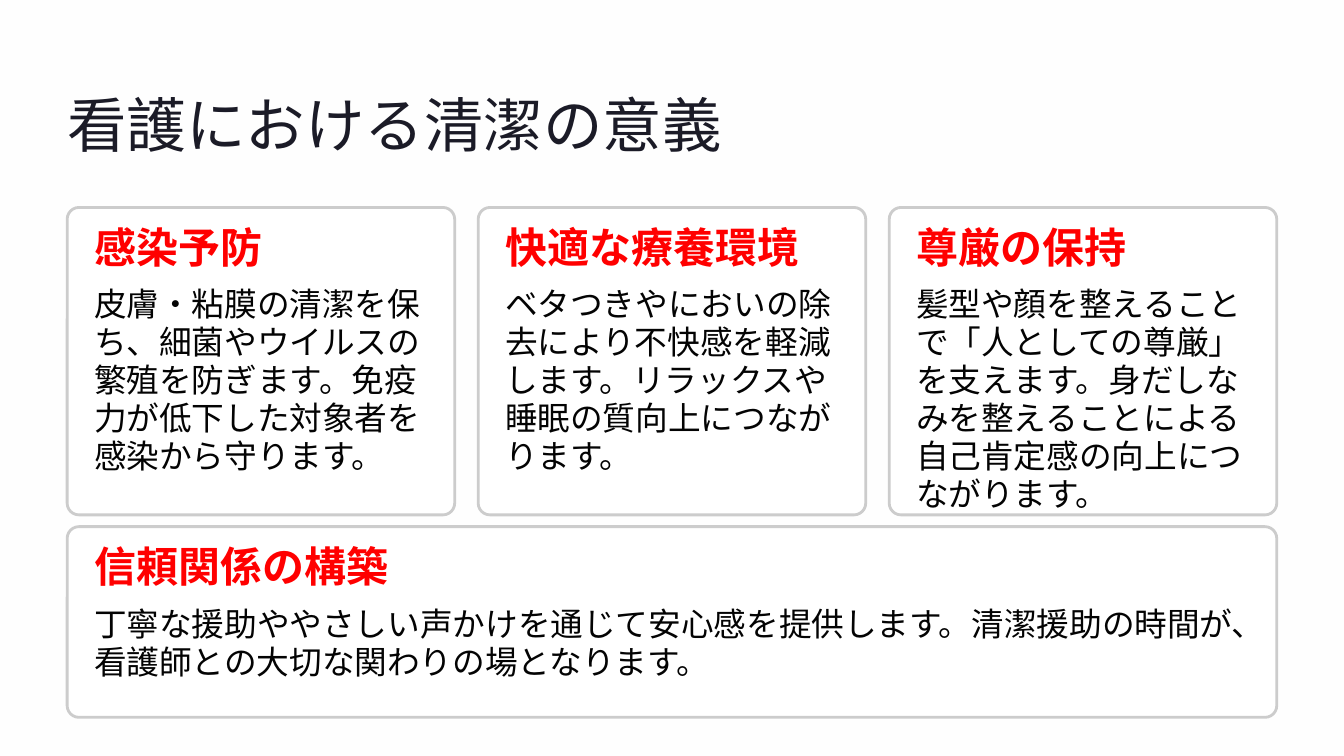
from pptx import Presentation
from pptx import util as u
from pptx.dml.color import RGBColor
from pptx.enum import shapes, text

COLORS = {"page": "FEFEFE", "card": "FFFFFF", "border": "CCCCCC",
          "title": "1B1B27", "heading": "FF0000", "body": "030303"}
MARGIN, CONTENT_W = 0.8, 14.4
COLUMN_GAP, PADDING, RADIUS = 0.28, 0.32, 0.14
CARD_TOP, CARD_H = 2.47, 3.66
WIDE_TOP, WIDE_H = 6.27, 2.27

BENEFITS = [
    ("感染予防", "皮膚・粘膜の清潔を保ち、細菌やウイルスの繁殖を防ぎます。免疫力が低下した対象者を感染から守ります。"),
    ("快適な療養環境", "ベタつきやにおいの除去により不快感を軽減します。リラックスや睡眠の質向上につながります。"),
    ("尊厳の保持", "髪型や顔を整えることで「人としての尊厳」を支えます。身だしなみを整えることによる自己肯定感の向上につながります。"),
]
TRUST = ("信頼関係の構築", "丁寧な援助ややさしい声かけを通じて安心感を提供します。清潔援助の時間が、看護師との大切な関わりの場となります。")


def rgb(name):
    return RGBColor.from_string(COLORS[name])


def add_text(s, box, words, color, size, spacing, font, bold=False, wrap=False):
    sp = s.shapes.add_textbox(*map(u.Inches, box))
    tf = sp.text_frame
    tf.word_wrap = wrap
    tf.vertical_anchor = text.MSO_ANCHOR.TOP
    tf.margin_left = tf.margin_right = tf.margin_top = tf.margin_bottom = 0
    p = tf.paragraphs[0]
    p.line_spacing = u.Pt(spacing)
    r = p.add_run()
    r.text = words
    r.font.name, r.font.size, r.font.bold = font, u.Pt(size), bold
    r.font.color.rgb = rgb(color)


def add_card(s, box, heading, body):
    x, y, w, h = box
    sp = s.shapes.add_shape(shapes.MSO_SHAPE.ROUNDED_RECTANGLE, *map(u.Inches, box))
    sp.adjustments[0] = RADIUS / min(w, h)
    sp.shadow.inherit = False
    sp.fill.solid()
    sp.fill.fore_color.rgb = rgb("card")
    sp.line.color.rgb = rgb("border")
    sp.line.width = u.Pt(2.4)
    left, inner_w = x + PADDING, w - 2 * PADDING
    add_text(s, (left, y + PADDING, inner_w, 0.45), heading, "heading", 36, 32, "Inter", bold=True)
    add_text(s, (left, y + 0.93, inner_w, h - 1.36), body, "body", 28, 32.5, "Cabin", wrap=True)


def add_benefits(s, box):
    """Set the benefit cards side by side in equal columns."""
    x, y, w, h = box
    n = len(BENEFITS)
    card_w = (w - (n - 1) * COLUMN_GAP) / n
    for i, (heading, body) in enumerate(BENEFITS):
        add_card(s, (x + i * (card_w + COLUMN_GAP), y, card_w, h), heading, body)


def main():
    prs = Presentation()
    prs.slide_width, prs.slide_height = u.Inches(16), u.Inches(9)
    s = prs.slides.add_slide(prs.slide_layouts[6])
    s.background.fill.solid()
    s.background.fill.fore_color.rgb = rgb("page")
    add_text(s, (MARGIN, 1.01, 7.83, 0.89), "看護における清潔の意義", "title", 51, 64, "Inter")
    add_benefits(s, (MARGIN, CARD_TOP, CONTENT_W, CARD_H))
    add_card(s, (MARGIN, WIDE_TOP, CONTENT_W, WIDE_H), *TRUST)
    prs.save("out.pptx")


if __name__ == "__main__":
    main()
